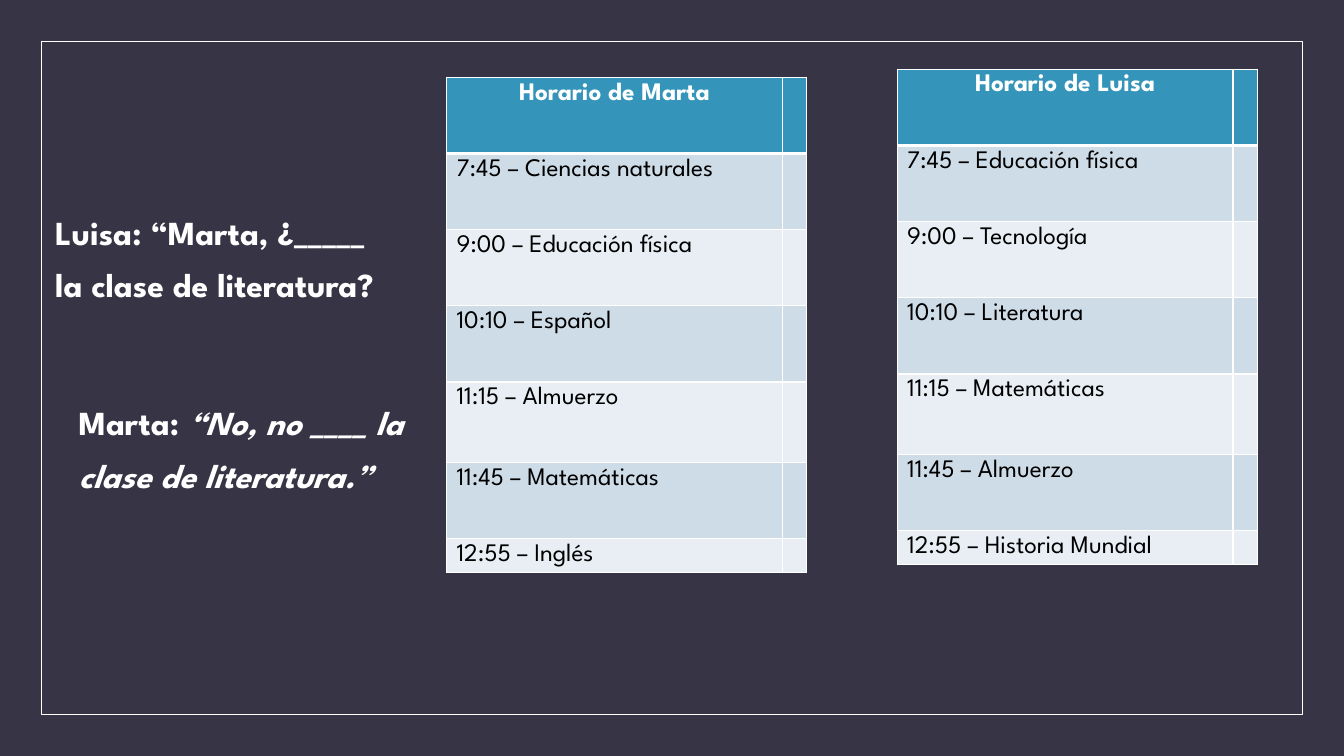
from lxml import etree
from pptx import Presentation
from pptx.dml.color import RGBColor
from pptx.enum.shapes import MSO_SHAPE
from pptx.enum.text import PP_ALIGN
from pptx.oxml.ns import qn
from pptx.util import Pt

RECTANGLE = MSO_SHAPE.RECTANGLE
CENTER = PP_ALIGN.CENTER

FONT = "League Spartan"
COLORS = {"background": "373545", "white": "FFFFFF", "black": "000000",
          "header": "3494BA", "odd": "CEDCE7", "even": "E8EEF3"}

# left, top, heading, classes
SCHEDULES = [
    (318.96, 55.3, "Horario de Marta",
     ["7:45 – Ciencias naturales", "9:00 – Educación física", "10:10 – Español",
      "11:15 – Almuerzo", "11:45 – Matemáticas", "12:55 – Inglés"]),
    (640.8, 49.5, "Horario de Luisa",
     ["7:45 – Educación física", "9:00 – Tecnología", "10:10 – Literatura",
      "11:15 – Matemáticas", "11:45 – Almuerzo", "12:55 – Historia Mundial"]),
]
COLUMN_WIDTHS = [240, 16.6]
ROW_HEIGHTS = [54.4, 54.4, 54.4, 54.4, 57.6, 54.4, 24]

# left, top, width, height, runs of (text, italic)
DIALOGUE = [
    (32.4, 139, 247, 94.3, [("Luisa: “Marta, ¿_____ la clase de literatura?", False)]),
    (49, 275, 260.6, 94.3, [("Marta: ", False),
                            ("“No, no ____ la clase de literatura.”", True)]),
]


def color(name):
    return RGBColor.from_string(COLORS[name])


def add_run(paragraph, text, color_name, **formats):
    run = paragraph.add_run()
    run.text = text
    run.font.color.rgb = color(color_name)
    for attribute, value in {"name": FONT, **formats}.items():
        setattr(run.font, attribute, value)


def set_borders(cell, widths):
    """Draw white cell borders; widths maps a side tag to points."""
    properties = cell._tc.get_or_add_tcPr()
    for index, (side, width) in enumerate(widths.items()):
        line = etree.Element(qn(f"a:{side}"), w=str(Pt(width)))
        fill = etree.SubElement(line, qn("a:solidFill"))
        etree.SubElement(fill, qn("a:srgbClr"), val=COLORS["white"])
        properties.insert(index, line)


def size_empty_cell(cell):
    """Give a cell without text the table font, so its row stays low."""
    end = etree.SubElement(cell.text_frame.paragraphs[0]._p,
                           qn("a:endParaRPr"), sz="1800")
    etree.SubElement(end, qn("a:latin"), typeface=FONT)


def add_schedule(slide, left, top, heading, classes):
    table = slide.shapes.add_table(
        len(ROW_HEIGHTS), len(COLUMN_WIDTHS), Pt(left), Pt(top),
        Pt(sum(COLUMN_WIDTHS)), Pt(sum(ROW_HEIGHTS))).table
    for column, width in zip(table.columns, COLUMN_WIDTHS):
        column.width = Pt(width)
    for row_number, (text, height) in enumerate(zip([heading, *classes], ROW_HEIGHTS)):
        table.rows[row_number].height = Pt(height)
        is_header = row_number == 0
        band = "header" if is_header else "odd" if row_number % 2 else "even"
        for cell in table.rows[row_number].cells:
            cell.fill.solid()
            cell.fill.fore_color.rgb = color(band)
            set_borders(cell, {"lnL": 1, "lnR": 1, "lnT": 3 if row_number == 1 else 1,
                               "lnB": 3 if is_header else 1})
        entry, blank = table.rows[row_number].cells
        paragraph = entry.text_frame.paragraphs[0]
        if is_header:
            paragraph.alignment = CENTER
        add_run(paragraph, text, "white" if is_header else "black",
                size=Pt(18), bold=is_header)
        size_empty_cell(blank)


def add_speech(slide, left, top, width, height, runs):
    frame = slide.shapes.add_textbox(Pt(left), Pt(top), Pt(width), Pt(height)).text_frame
    frame.word_wrap = True
    paragraph = frame.paragraphs[0]
    paragraph.line_spacing = 1.3
    for text, italic in runs:
        add_run(paragraph, text, "white", size=Pt(24), bold=True, italic=italic)


def main():
    deck = Presentation()
    deck.slide_width, deck.slide_height = Pt(960), Pt(540)
    slide = deck.slides.add_slide(deck.slide_layouts[6])
    slide.background.fill.solid()
    slide.background.fill.fore_color.rgb = color("background")

    border = slide.shapes.add_shape(RECTANGLE, Pt(29.4), Pt(29.4), Pt(901.2), Pt(481.2))
    border.shadow.inherit = False
    border.fill.background()
    border.line.color.rgb = color("white")
    border.line.width = Pt(0.5)

    for schedule in SCHEDULES:
        add_schedule(slide, *schedule)
    for speech in DIALOGUE:
        add_speech(slide, *speech)
    deck.save("out.pptx")


if __name__ == "__main__":
    main()
